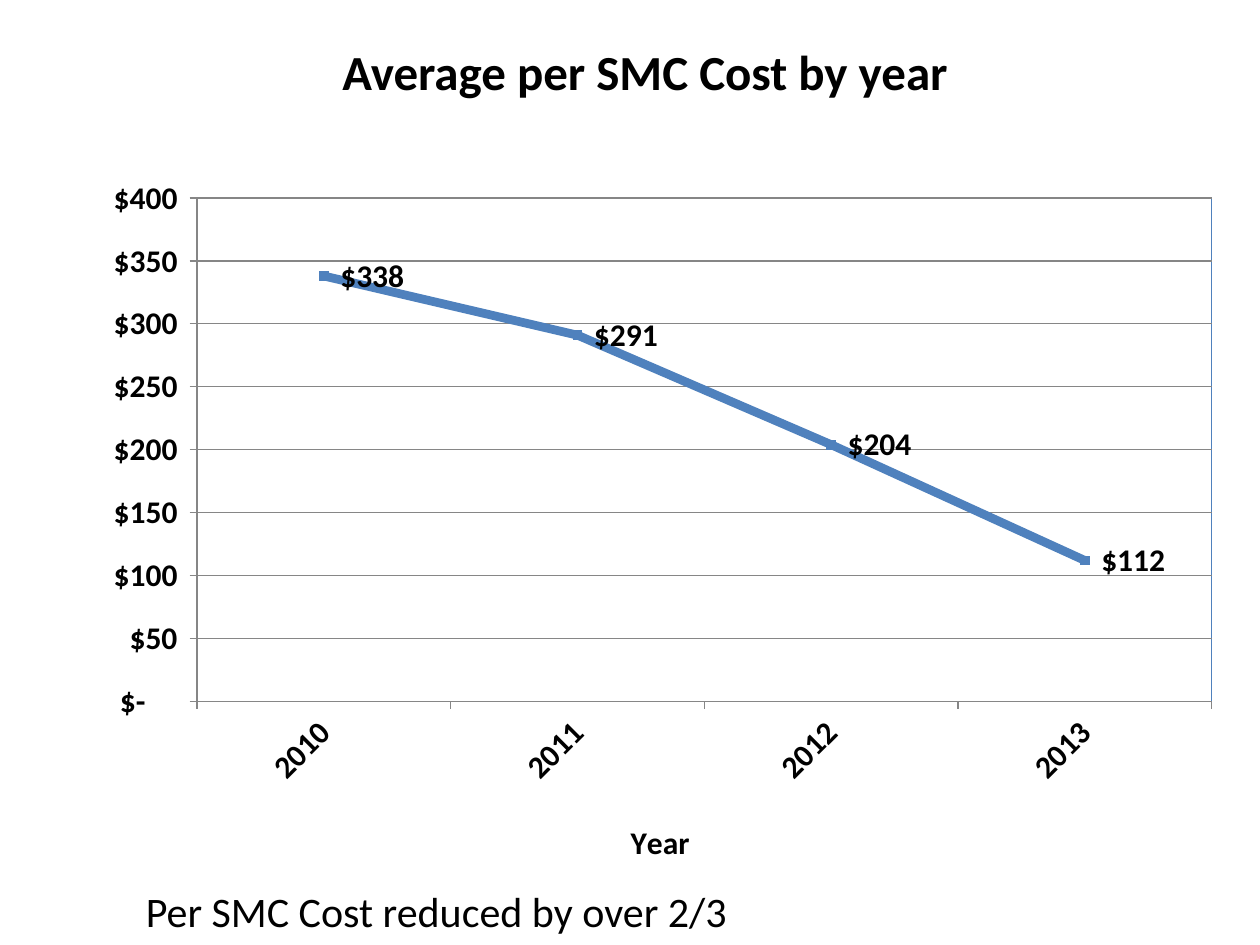
from lxml.etree import SubElement
from pptx import Presentation
from pptx.chart.data import CategoryChartData
from pptx.dml.color import RGBColor
from pptx.enum.chart import XL_CHART_TYPE as ChartType
from pptx.enum.chart import XL_LABEL_POSITION as LabelPosition
from pptx.enum.chart import XL_MARKER_STYLE as MarkerStyle
from pptx.enum.chart import XL_TICK_MARK as TickMark
from pptx.enum.text import MSO_ANCHOR as Anchor
from pptx.enum.text import PP_ALIGN as Align
from pptx.oxml import parse_xml
from pptx.oxml.ns import nsdecls, qn
from pptx.util import Cm, Pt

COLORS = {"text": "000000", "series": "4F81BD", "axis": "868686"}
FONT = "Calibri"
MONEY = '_("$"* #,##0_);_("$"* \\(#,##0\\);_("$"* "-"??_);_(@_)'


def add_text(text, left, top, width, height, size, bold=False,
             align=Align.LEFT, anchor=Anchor.TOP):
    box = slide.shapes.add_textbox(Cm(left), Cm(top), Cm(width), Cm(height))
    frame = box.text_frame
    frame.word_wrap = True
    frame.vertical_anchor = anchor
    paragraph = frame.paragraphs[0]
    paragraph.text = text
    paragraph.alignment = align
    paragraph.font.name = FONT
    paragraph.font.size = Pt(size)
    paragraph.font.bold = bold
    paragraph.font.color.rgb = RGBColor.from_string(COLORS["text"])


def set_layout(parent, index, **settings):
    """Place a chart part by fractions of the chart's size."""
    for old in parent.findall(qn("c:layout")):
        parent.remove(old)
    layout = parse_xml(f"<c:layout {nsdecls('c')}/>")
    manual = SubElement(layout, qn("c:manualLayout"))
    for name, value in settings.items():
        SubElement(manual, qn(f"c:{name}")).set("val", str(value))
    parent.insert(index, layout)


presentation = Presentation()
presentation.slide_width = Cm(25.4)
presentation.slide_height = Cm(19.05)
slide = presentation.slides.add_slide(presentation.slide_layouts[6])

# Title
add_text("Average per SMC Cost by year", 1.7, 0.33, 22.6, 2.21, size=28,
         bold=True, align=Align.CENTER, anchor=Anchor.MIDDLE)

# Line chart
data = CategoryChartData(number_format=MONEY)
data.categories = ["2010", "2011", "2012", "2013"]
data.add_series("Series 1", [338, 291, 204, 112])
chart = slide.shapes.add_chart(ChartType.LINE_MARKERS, Cm(1.7), Cm(3.33),
                               Cm(23.19), Cm(14.4), data).chart
chart.has_legend = False
chart.has_title = False
chart.font.name = FONT
chart.font.size = Pt(18)
chart.font.bold = True
chart.font.color.rgb = RGBColor.from_string(COLORS["text"])

# Axes and gridlines
cost_axis, year_axis = chart.value_axis, chart.category_axis
cost_axis.minimum_scale = 0
cost_axis.maximum_scale = 400
cost_axis.major_unit = 50
cost_axis.has_major_gridlines = True
cost_axis.tick_labels.number_format = MONEY
cost_axis.tick_labels.number_format_is_linked = False
for axis in (cost_axis, year_axis):
    axis.major_tick_mark = TickMark.OUTSIDE
for part in (cost_axis, year_axis, cost_axis.major_gridlines):
    part.format.line.color.rgb = RGBColor.from_string(COLORS["axis"])
    part.format.line.width = Pt(0.75)
year_axis.tick_labels.font.size = Pt(18)
year_axis._element.find(qn("c:txPr")).find(qn("a:bodyPr")).set("rot", "-2700000")

# Year axis title
title_frame = year_axis.axis_title.text_frame
title_frame.text = "Year"
title_font = title_frame.paragraphs[0].font
title_font.name = FONT
title_font.size = Pt(18)
title_font.bold = True
title_font.color.rgb = RGBColor.from_string(COLORS["text"])
set_layout(year_axis.axis_title._element, 1,
           xMode="edge", yMode="edge", x=0.47, y=0.91)

# Series
plot = chart.plots[0]
plot.vary_by_categories = False
series = plot.series[0]
series.smooth = False
series_color = RGBColor.from_string(COLORS["series"])
series.format.line.color.rgb = series_color
series.format.line.width = Pt(5)
series.marker.style = MarkerStyle.SQUARE
series.marker.size = 5
series.marker.format.fill.solid()
series.marker.format.fill.fore_color.rgb = series_color
series.marker.format.line.color.rgb = series_color
labels = series.data_labels
labels.show_value = True
labels.position = LabelPosition.RIGHT
labels.number_format = MONEY
labels.number_format_is_linked = False

# Plot area position and border
plot_area = chart._chartSpace.chart.plotArea
set_layout(plot_area, 0, layoutTarget="inner", xMode="edge", yMode="edge",
           x=0.098, y=0.046, w=0.882, h=0.705)
plot_area.append(parse_xml(
    f"<c:spPr {nsdecls('c', 'a')}><a:noFill/><a:ln w='9525'><a:solidFill>"
    f"<a:srgbClr val='{COLORS['series']}'/></a:solidFill></a:ln></c:spPr>"))

# Takeaway
add_text("Per SMC Cost reduced by over 2/3", 2.69, 17.73, 16.61, 1.27, size=24)

presentation.save("out.pptx")
